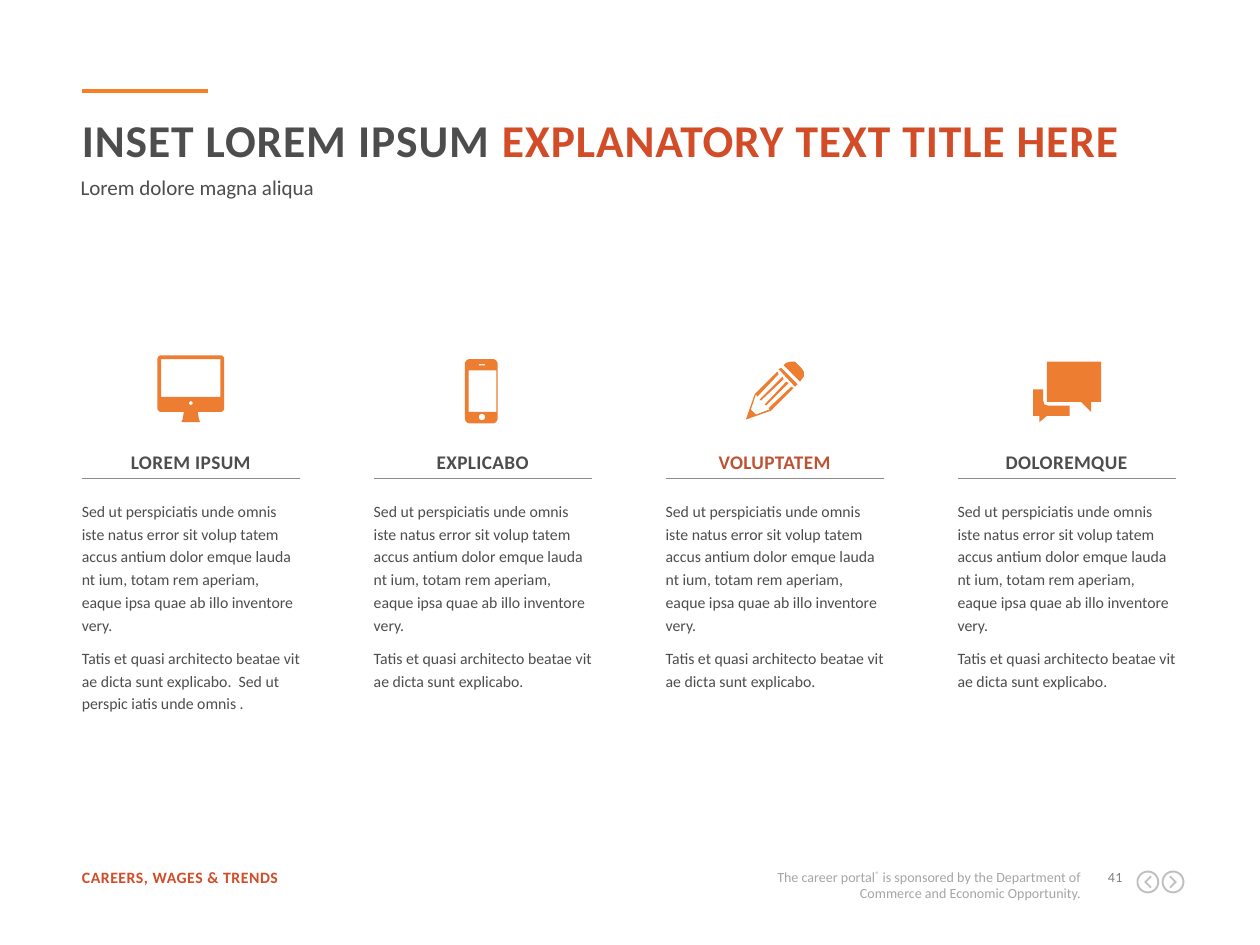
from math import cos, pi, sin

from lxml.etree import SubElement
from pptx import Presentation
from pptx.dml.color import RGBColor
from pptx.enum.shapes import MSO_CONNECTOR as Connector
from pptx.enum.text import MSO_AUTO_SIZE as AutoSize, PP_ALIGN as Align
from pptx.oxml.ns import qn
from pptx.util import Inches, Pt

FONT = "Calibri"
DARK, RED, RUST, ORANGE = "4D4D4D", "D14C27", "BE5333", "ED7D31"
ACCENT, RULE, CREDIT, NUMBER, BUTTON = "F58025", "8C8C8C", "A5A5A5", "808080", "BFBFBF"

LEFT, COLUMN_WIDTH, COLUMN_COUNT = 0.65, 1.73, 4
COLUMN_STEP = (7.6 - LEFT) / (COLUMN_COUNT - 1)
INTRO = ("Sed ut perspiciatis unde omnis iste natus error sit volup tatem accus "
         "antium dolor emque lauda nt ium, totam rem aperiam, eaque ipsa quae ab "
         "illo inventore very.")
CLOSING = "Tatis et quasi architecto beatae vit ae dicta sunt explicabo."
COLUMNS = [
    ("LOREM IPSUM", DARK, CLOSING + "  Sed ut perspic iatis unde omnis ."),
    ("EXPLICABO", DARK, CLOSING),
    ("VOLUPTATEM", RUST, CLOSING),
    ("DOLOREMQUE", DARK, CLOSING),
]


def arc(x, y, radius, start, end, steps=8):
    angles = [start + (end - start) * i / steps for i in range(steps + 1)]
    return [(x + radius * cos(a), y + radius * sin(a)) for a in angles]


def circle(x, y, radius):
    return arc(x, y, radius, 0, 2 * pi, 40)[:-1]


def box(left, top, width, height, radius=0):
    right, bottom = left + width, top + height
    if not radius:
        return [(left, top), (right, top), (right, bottom), (left, bottom)]
    centers = [(right - radius, bottom - radius), (left + radius, bottom - radius),
               (left + radius, top + radius), (right - radius, top + radius)]
    return [point for i, (x, y) in enumerate(centers)
            for point in arc(x, y, radius, i * pi / 2, (i + 1) * pi / 2)]


MONITOR = [
    box(1.25, 2.82, 0.53, 0.45, 0.03),
    box(1.28, 2.85, 0.47, 0.3),
    circle(1.515, 3.2, 0.015),
    [(1.46, 3.27), (1.57, 3.27), (1.58, 3.33), (1.59, 3.35), (1.44, 3.35), (1.45, 3.33)],
]
PHONE = [
    box(3.69, 2.85, 0.26, 0.51, 0.04),
    box(3.72, 2.94, 0.22, 0.33),
    circle(3.825, 3.31, 0.025),
    box(3.8, 2.89, 0.05, 0.01),
]
PENCIL = [
    [(5.92, 3.33), (5.99, 3.13), (6.17, 2.95), (6.18, 2.97), (6.01, 3.15), (6, 3.13),
     (5.98, 3.19), (5.96, 3.25), (5.98, 3.27), (6, 3.29), (6.11, 3.25), (6.1, 3.24),
     (6.28, 3.07), (6.3, 3.08), (6.12, 3.26)],
    [(6.03, 3.17), (6.21, 2.99), (6.22, 3.01), (6.04, 3.18)],
    [(6.07, 3.21), (6.24, 3.03), (6.26, 3.04), (6.08, 3.22)],
    [(6.18, 2.93), (6.2, 2.92), (6.33, 3.05), (6.31, 3.07)],
    [(6.22, 2.9), (6.24, 2.88), (6.28, 2.87), (6.31, 2.87), (6.33, 2.89), (6.36, 2.92),
     (6.38, 2.95), (6.38, 2.99), (6.35, 3.03)],
]
BUBBLES = [
    [(8.2, 3.09), (8.28, 3.09), (8.28, 3.18), (8.29, 3.21), (8.32, 3.22), (8.49, 3.22),
     (8.49, 3.3), (8.31, 3.3), (8.25, 3.35), (8.25, 3.3), (8.2, 3.3)],
    [(8.31, 2.87), (8.74, 2.87), (8.74, 3.19), (8.66, 3.19), (8.66, 3.27), (8.58, 3.19),
     (8.31, 3.19)],
]
CHEVRON = [(-0.03, -0.04), (0.01, 0), (-0.03, 0.04), (-0.02, 0.05), (0.03, 0), (-0.02, -0.05)]


def button(x, direction, y=7):
    chevron = [(x + direction * dx, y + dy) for dx, dy in CHEVRON]
    return [circle(x, y, 0.09), circle(x, y, 0.075), chevron]


def color(value):
    return RGBColor.from_string(value)


def add_icon(slide, contours, fill):
    contours = [[(Inches(x), Inches(y)) for x, y in contour] for contour in contours]
    builder = slide.shapes.build_freeform(*contours[0][0])
    for index, contour in enumerate(contours):
        if index:
            builder.move_to(*contour[0])
        builder.add_line_segments(contour[1:], close=True)
    shape = builder.convert_to_shape()
    shape.shadow.inherit = False
    shape.fill.solid()
    shape.fill.fore_color.rgb = color(fill)
    shape.line.fill.background()


def add_rule(slide, left, top, width, stroke, weight):
    line = slide.shapes.add_connector(
        Connector.STRAIGHT, Inches(left), Inches(top), Inches(left + width), Inches(top))
    line.line.color.rgb = color(stroke)
    line.line.width = Pt(weight)
    SubElement(line._element.spPr, qn("a:effectLst"))


def add_text(slide, area, paragraphs, size, bold=False, align=Align.LEFT,
             line_height=None, after=0, tracking=0, grow=True):
    frame = slide.shapes.add_textbox(*map(Inches, area)).text_frame
    frame.margin_left = frame.margin_top = frame.margin_right = frame.margin_bottom = 0
    frame.word_wrap = True
    frame.auto_size = AutoSize.SHAPE_TO_FIT_TEXT if grow else AutoSize.NONE
    for index, runs in enumerate(paragraphs):
        paragraph = frame.add_paragraph() if index else frame.paragraphs[0]
        paragraph.alignment = align
        paragraph.space_after = Pt(after)
        if line_height:
            paragraph.line_spacing = Pt(line_height)
        for text, fill, *baseline in runs:
            run = paragraph.add_run()
            run.text = text
            run.font.name = FONT
            run.font.size = Pt(size)
            run.font.bold = bold
            run.font.color.rgb = color(fill)
            properties = run._r.get_or_add_rPr()
            if tracking:
                properties.set("spc", str(round(tracking * 100)))
            if baseline:
                properties.set("baseline", str(baseline[0] * 1000))


def main():
    presentation = Presentation()
    presentation.slide_width, presentation.slide_height = Inches(10), Inches(7.5)
    slide = presentation.slides.add_slide(presentation.slide_layouts[6])

    add_rule(slide, LEFT, 0.72, 1, ACCENT, 2.25)
    add_text(slide, (LEFT, 0.89, 8.7, 0.34),
             [[("INSET LOREM IPSUM ", DARK), ("EXPLANATORY TEXT TITLE HERE", RED)]],
             26, bold=True, tracking=0.5, grow=False)
    add_text(slide, (0.64, 1.42, 8.7, 0.42), [[("Lorem dolore magna aliqua", DARK)]],
             12, line_height=12, grow=False)

    for index, (heading, heading_color, closing) in enumerate(COLUMNS):
        left = LEFT + index * COLUMN_STEP
        add_text(slide, (left, 3.52, COLUMN_WIDTH, 0.22), [[(heading, heading_color)]],
                 11, bold=True, align=Align.CENTER, line_height=17, after=6, tracking=0.2)
        add_rule(slide, left, 3.8, COLUMN_WIDTH, RULE, 0.5)
        add_text(slide, (left, 3.95, COLUMN_WIDTH, 1.53),
                 [[(INTRO, DARK)], [(closing, DARK)]], 9, line_height=13, after=6)

    for icon in (MONITOR, PHONE, PENCIL, BUBBLES):
        add_icon(slide, icon, ORANGE)

    add_text(slide, (LEFT, 6.89, 1.95, 0.15), [[("CAREERS, WAGES & TRENDS", RED)]],
             9, bold=True, tracking=0.3)
    add_text(slide, (5.67, 6.89, 2.91, 0.27),
             [[("The career portal", CREDIT), ("®", CREDIT, 30),
               (" is sponsored by the Department of Commerce and Economic Opportunity.",
                CREDIT)]], 8, align=Align.RIGHT)
    add_text(slide, (8.68, 6.89, 0.23, 0.13), [[("41", NUMBER)]],
             8, align=Align.RIGHT, tracking=0.3)
    for x, direction in ((9.11, -1), (9.31, 1)):
        add_icon(slide, button(x, direction), BUTTON)

    presentation.save("out.pptx")


if __name__ == "__main__":
    main()
